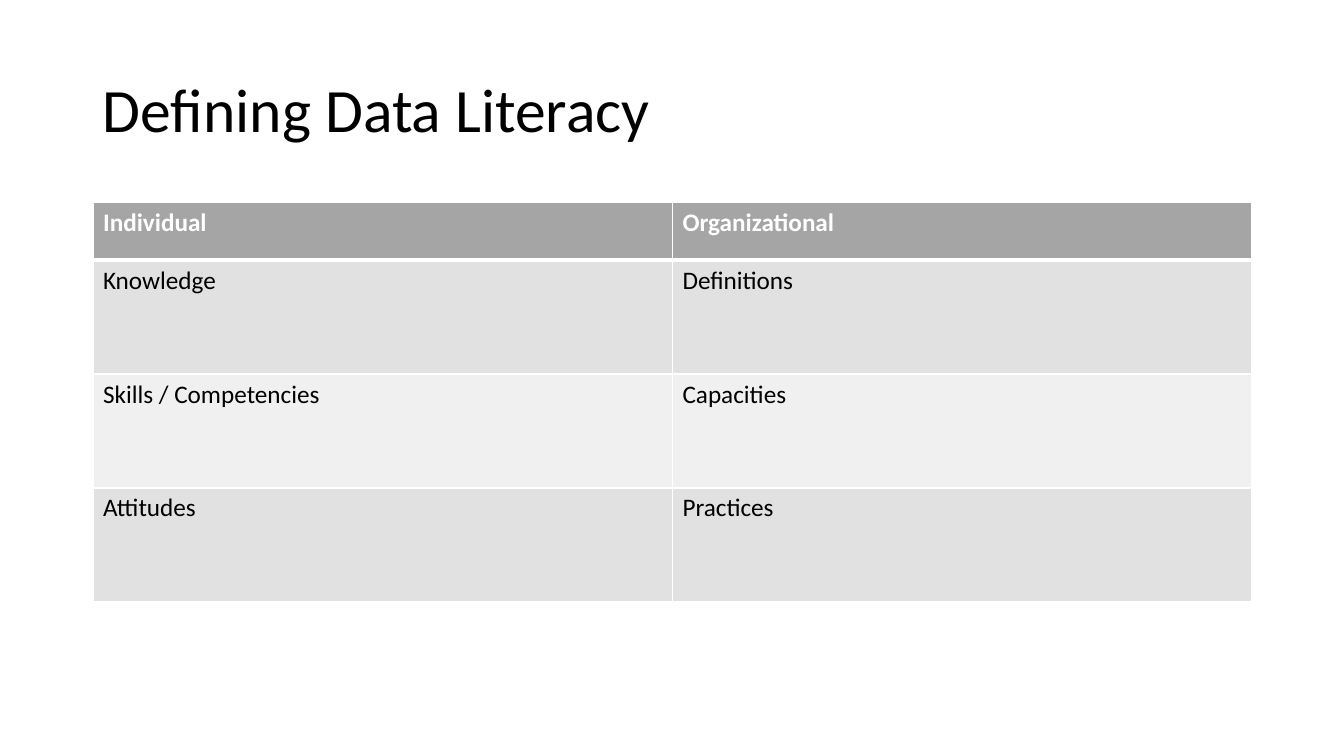
from dataclasses import dataclass

from lxml import etree
from pptx import Presentation
from pptx.dml.color import RGBColor
from pptx.enum.text import MSO_ANCHOR
from pptx.oxml.ns import qn
from pptx.util import Pt

MIDDLE = MSO_ANCHOR.MIDDLE
EMU_PER_PX = 914400 / 100.8


@dataclass(frozen=True)
class Theme:
    font: str = "Calibri"
    title_size: int = 44
    cell_size: int = 18
    text: str = "000000"
    header_text: str = "FFFFFF"
    header_fill: str = "A5A5A5"
    band_fills: tuple = ("E1E1E1", "F0F0F0")
    border: str = "FFFFFF"
    border_width: int = 1
    header_rule_width: int = 3


def px(n):
    return round(n * EMU_PER_PX)


def style_run(r, size, color, bold=False):
    r.font.name = theme.font
    r.font.size = Pt(size)
    r.font.bold = bold
    r.font.color.rgb = RGBColor.from_string(color)


theme = Theme()
prs = Presentation()
prs.slide_width, prs.slide_height = px(1344), px(756)
s = prs.slides.add_slide(prs.slide_layouts[6])

LEFT, WIDTH = 93, 1159

# Title
title = s.shapes.add_textbox(px(LEFT), px(40), px(WIDTH), px(146))
tf = title.text_frame
tf.word_wrap = True
tf.vertical_anchor = MIDDLE
tf.text = "Defining Data Literacy"
p = tf.paragraphs[0]
p.line_spacing = 0.9
style_run(p.runs[0], theme.title_size, theme.text)

# Table
rows = [
    ("Individual", "Organizational"),
    ("Knowledge", "Definitions"),
    ("Skills / Competencies", "Capacities"),
    ("Attitudes", "Practices"),
]
HEADER_HEIGHT, ROW_HEIGHT = 58, 114
table_height = HEADER_HEIGHT + ROW_HEIGHT * (len(rows) - 1)
table = s.shapes.add_table(
    len(rows), 2, px(LEFT), px(202), px(WIDTH), px(table_height)
).table
for column in table.columns:
    column.width = px(WIDTH / 2)

for i, labels in enumerate(rows):
    is_header = i == 0
    table.rows[i].height = px(HEADER_HEIGHT if is_header else ROW_HEIGHT)
    fill = theme.header_fill if is_header else theme.band_fills[(i - 1) % 2]
    color = theme.header_text if is_header else theme.text
    # The header's bottom edge is also the top edge of the first body row.
    heavy_side = {0: "lnB", 1: "lnT"}.get(i)

    for j, label in enumerate(labels):
        cell = table.cell(i, j)
        cell.text = label
        style_run(cell.text_frame.paragraphs[0].runs[0],
                  theme.cell_size, color, is_header)

        tc_pr = cell._tc.get_or_add_tcPr()
        for side in ("lnL", "lnR", "lnT", "lnB"):
            width = theme.header_rule_width if side == heavy_side else theme.border_width
            line = etree.SubElement(tc_pr, qn(f"a:{side}"), w=str(Pt(width)))
            solid = etree.SubElement(line, qn("a:solidFill"))
            etree.SubElement(solid, qn("a:srgbClr"), val=theme.border)

        cell.fill.solid()
        cell.fill.fore_color.rgb = RGBColor.from_string(fill)

prs.save("out.pptx")
